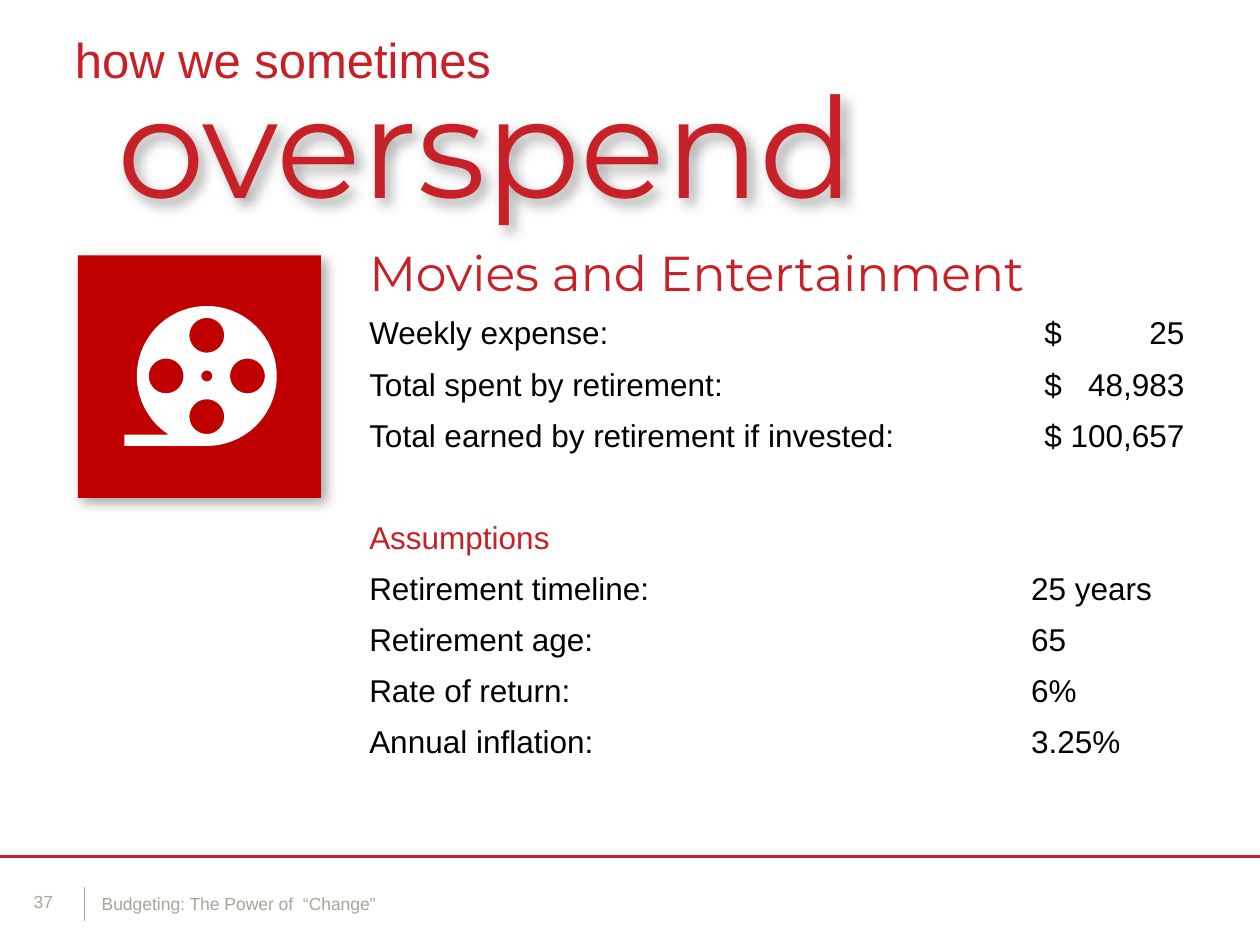
from dataclasses import dataclass
from math import cos, radians, sin

from lxml.etree import SubElement
from pptx import Presentation
from pptx.dml.color import RGBColor as Rgb
from pptx.enum.shapes import MSO_CONNECTOR as Link, MSO_SHAPE as Preset
from pptx.enum.text import MSO_ANCHOR as Anchor, MSO_AUTO_SIZE as Fit, PP_ALIGN as Align
from pptx.oxml.ns import qn
from pptx.util import Cm, Pt

NO_STYLE = "{2D5ABB26-0587-4C30-8999-92F81FD0307C}"


@dataclass(frozen=True)
class Theme:
    red: Rgb = Rgb(0xC7, 0x21, 0x27)
    tile: Rgb = Rgb(0xC0, 0x00, 0x00)
    black: Rgb = Rgb(0, 0, 0)
    white: Rgb = Rgb(0xFF, 0xFF, 0xFF)
    rule: Rgb = Rgb(0xA6, 0xA6, 0xA6)
    muted: Rgb = Rgb(0xA6, 0xA6, 0x98)
    plain: str = "Arial"
    fancy: str = "Montserrat"
    huge: int = 80
    large: int = 28
    body: int = 18
    small: int = 10


THEME = Theme()


@dataclass(frozen=True)
class Style:
    size: int
    color: Rgb
    face: str = THEME.plain


@dataclass(frozen=True)
class Box:
    left: float
    top: float
    width: float
    height: float

    def place(self) -> tuple:
        return Cm(self.left), Cm(self.top), Cm(self.width), Cm(self.height)


@dataclass(frozen=True)
class Row:
    label: str
    value: str = ""
    style: Style = Style(THEME.body, THEME.black)
    wide: bool = False
    gap: int = 0  # points added after the dollar sign


HEAD = Style(THEME.large, THEME.red, THEME.fancy)
NOTE = Style(THEME.small, THEME.muted)
ROWS = [
    Row("Movies and Entertainment", style=HEAD, wide=True),
    Row("Weekly expense:", "$ 25", gap=45),
    Row("Total spent by retirement:", "$ 48,983", gap=10),
    Row("Total earned by retirement if invested:", "$ 100,657"),
    Row("", wide=True),
    Row("Assumptions", style=Style(THEME.body, THEME.red), wide=True),
    Row("Retirement timeline:", "25 years"),
    Row("Retirement age:", "65"),
    Row("Rate of return:", "6%"),
    Row("Annual inflation:", "3.25%"),
]


def dress(font, style: Style) -> None:
    font.name, font.size = style.face, Pt(style.size)
    font.color.rgb = style.color


def write(frame, text: str, style: Style) -> None:
    frame.text = text
    para = frame.paragraphs[0]
    para.alignment = Align.LEFT
    for font in [para.font] + [run.font for run in para.runs]:
        dress(font, style)


def write_sum(frame, row: Row) -> None:
    """Set a sum to the right, with its dollar sign spaced away from the digits."""
    write(frame, row.value[0], row.style)
    para = frame.paragraphs[0]
    para.alignment = Align.RIGHT
    para.runs[0].font._element.set("spc", str(row.gap * 100))
    rest = para.add_run()
    rest.text = row.value[1:]
    dress(rest.font, row.style)


def add_text(slide, box: Box, text: str, style: Style) -> None:
    frame = slide.shapes.add_textbox(*box.place()).text_frame
    frame.word_wrap = True
    write(frame, text, style)


def add_line(slide, start: tuple, end: tuple, color: Rgb, width: float) -> None:
    ends = [Cm(num) for num in start + end]
    line = slide.shapes.add_connector(Link.STRAIGHT, *ends)
    line.line.color.rgb, line.line.width = color, Pt(width)
    SubElement(line._element.spPr, qn("a:effectLst"))


def paint(shape, color: Rgb) -> None:
    shape.fill.solid()
    shape.fill.fore_color.rgb = color
    shape.line.fill.background()
    shape.shadow.inherit = False


def add_rect(slide, box: Box, color: Rgb):
    rect = slide.shapes.add_shape(Preset.RECTANGLE, *box.place())
    paint(rect, color)
    return rect


def cast_shade(shape) -> None:
    """Give the shape a soft shadow to the lower right."""
    shape.shadow.inherit = False
    effects = shape._element.spPr.find(qn("a:effectLst"))
    shade = SubElement(effects, qn("a:outerShdw"), blurRad=str(Pt(7.2)),
                       dist=str(Pt(3.8)), dir=str(45 * 60000), algn="tl", rotWithShape="0")
    color = SubElement(shade, qn("a:srgbClr"), val=str(THEME.black))
    SubElement(color, qn("a:alpha"), val="35000")


def add_title(slide, box: Box, text: str, style: Style) -> None:
    title = slide.shapes.title
    title.left, title.top, title.width, title.height = box.place()
    frame = title.text_frame
    frame.auto_size, frame.word_wrap = Fit.NONE, True
    frame.vertical_anchor = Anchor.TOP
    write(frame, text, style)
    cast_shade(title)


def add_costs(slide, box: Box, widths: tuple, rows: list) -> None:
    table = slide.shapes.add_table(len(rows), len(widths), *box.place()).table
    table.first_row = table.horz_banding = False
    table._tbl.tblPr.find(qn("a:tableStyleId")).text = NO_STYLE
    for col, width in zip(table.columns, widths):
        col.width = Cm(width)
    for num, row in enumerate(rows):
        table.rows[num].height = Cm(1.45 if row.style is HEAD else 1.03)
        cells = [table.cell(num, col) for col in range(len(widths))]
        for cell in cells:
            cell.fill.background()
        write(cells[0].text_frame, row.label, row.style)
        if row.wide:
            cells[0].merge(cells[1])
        elif row.value.startswith("$"):
            write_sum(cells[1].text_frame, row)
        else:
            write(cells[1].text_frame, row.value, row.style)


def arc(x: float, y: float, radius: float, start: int, end: int, step: int) -> list:
    return [(Cm(x + radius * cos(radians(deg))), Cm(y + radius * sin(radians(deg))))
            for deg in range(start, end, step)]


def add_reel(slide, x: float, y: float, radius: float) -> None:
    """Draw a film reel with five holes and a strip running out to the left."""
    base, left, strip = y + radius, x - 1.66, 0.23
    rim = arc(x, y, radius, 124, 451, 2)
    tail = [(Cm(left), Cm(base)), (Cm(left), Cm(base - strip))]
    gap = 0.82
    holes = [(0, 0, 0.11)] + [(dx, dy, 0.35) for dx, dy in
                              ((gap, 0), (-gap, 0), (0, gap), (0, -gap))]
    path = slide.shapes.build_freeform(*rim[0])
    path.add_line_segments(rim[1:] + tail + [(rim[0][0], tail[1][1])])
    for dx, dy, size in holes:
        ring = arc(x + dx, y + dy, size, 360, 0, -8)
        path.move_to(*ring[0])
        path.add_line_segments(ring[1:])
    paint(path.convert_to_shape(), THEME.white)


def main() -> None:
    deck = Presentation()
    deck.slide_width, deck.slide_height = Cm(25.4), Cm(19.05)
    slide = deck.slides.add_slide(deck.slide_layouts[5])

    panel = add_rect(slide, Box(0, 0, 25.4, 16.94), THEME.white)
    slide.shapes.title._element.addprevious(panel._element)
    add_line(slide, (1.7, 17.88), (1.7, 18.57), THEME.rule, 0.25)
    add_text(slide, Box(0.43, 17.83, 0.99, 0.69), "37", NOTE)
    add_text(slide, Box(1.8, 17.88, 10.77, 0.69), "Budgeting: The Power of  “Change”", NOTE)
    add_line(slide, (0, 17.27), (25.4, 17.27), THEME.red, 1.5)

    add_title(slide, Box(2.11, 1.05, 17.55, 3.69), "overspend",
              Style(THEME.huge, THEME.red, THEME.fancy))
    add_text(slide, Box(1.26, 0.48, 15.88, 1.45), "how we sometimes",
             Style(THEME.large, THEME.red))
    add_costs(slide, Box(7.19, 4.8, 16.94, 10.72), (13.34, 3.6), ROWS)
    cast_shade(add_rect(slide, Box(1.57, 5.15, 4.9, 4.89), THEME.tile))
    add_reel(slide, 4.17, 7.58, 1.41)
    deck.save("out.pptx")


if __name__ == "__main__":
    main()
